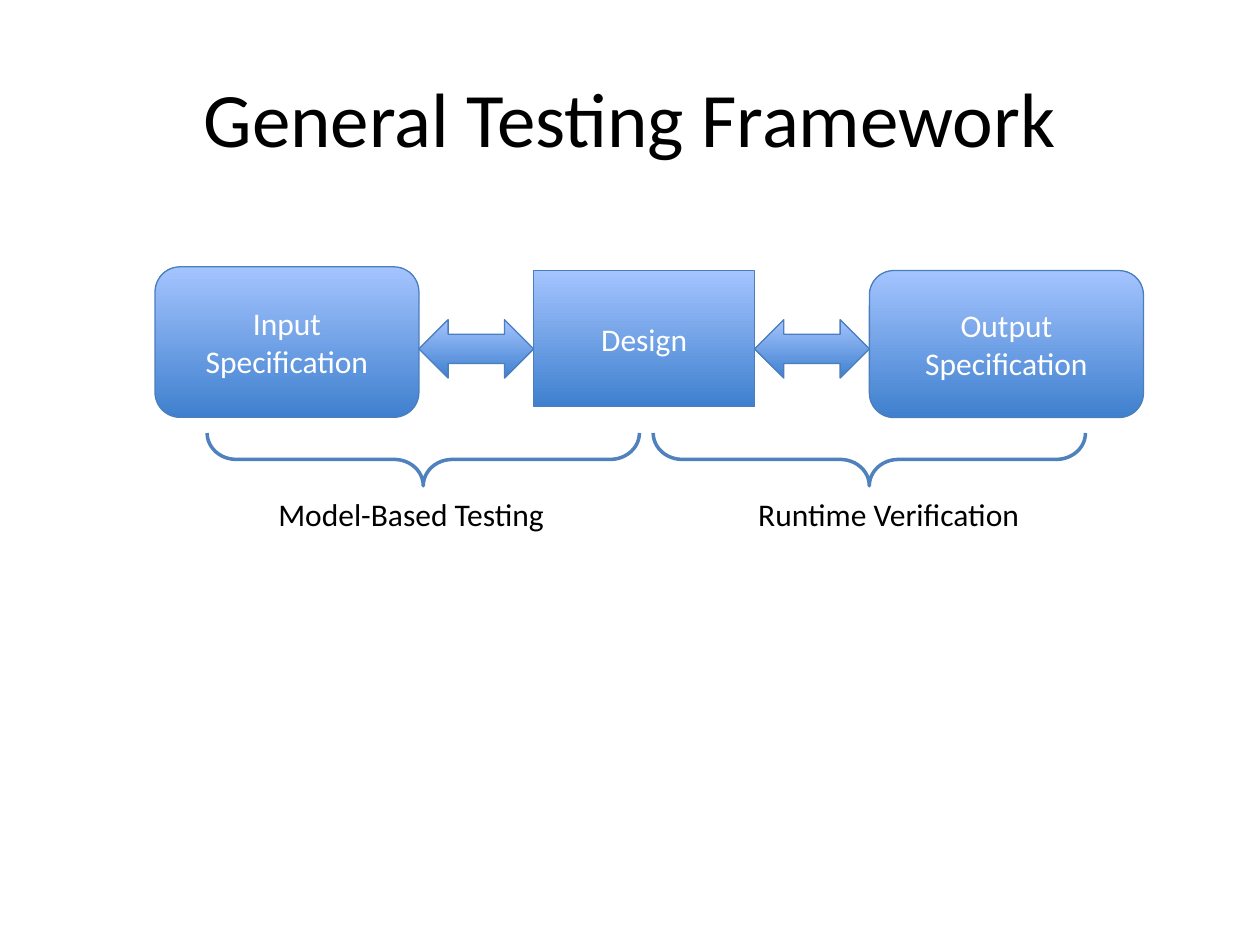
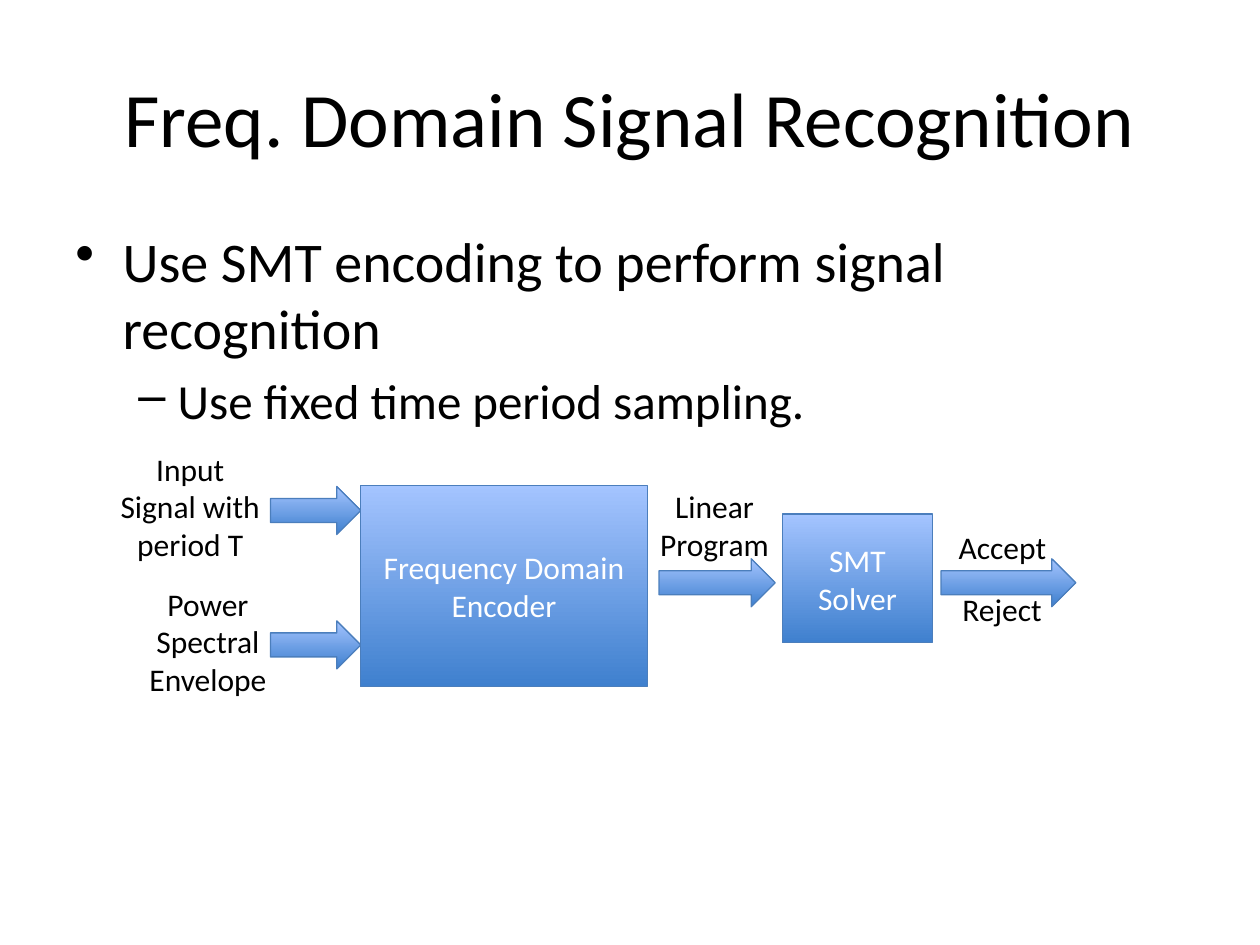
from dataclasses import dataclass

from lxml.etree import SubElement
from pptx import Presentation
from pptx.dml.color import RGBColor
from pptx.enum.shapes import MSO_SHAPE
from pptx.enum.text import MSO_ANCHOR, PP_ALIGN
from pptx.oxml.ns import qn
from pptx.util import Pt


@dataclass(frozen=True)
class Theme:
    """Colours and type sizes for the whole deck."""

    font: str = "Calibri"
    ink: str = "000000"
    light: str = "FFFFFF"
    deep: str = "3F80CE"
    pale: str = "A4C4FF"
    edge: str = "4B7EBC"
    brace: str = "4F81BD"
    title: int = 44
    label: int = 18
    levels: tuple = (32, 28)


THEME = Theme()
BULLETS = (("•", 27, 27), ("–", 58.5, 22.5))


def place(item, spot):
    """Move and size an item, in points."""
    item.left, item.top, item.width, item.height = map(Pt, spot)


def style(para, size, color, align):
    """Set the font and alignment of a paragraph."""
    para.font.name = THEME.font
    para.font.size = Pt(size)
    para.font.color.rgb = RGBColor.from_string(color)
    para.alignment = align


def write(frame, lines, size, color, align):
    """Write one paragraph per line in a common style."""
    frame.word_wrap = True
    frame.text = "\n".join(lines)
    for para in frame.paragraphs:
        style(para, size, color, align)


def add_page(deck, title):
    """Add a title-only slide with its title in place."""
    slide = deck.slides.add_slide(deck.slide_layouts[5])
    head = slide.shapes.title
    place(head, (36, 21.6, 648, 90))
    write(head.text_frame, [title], THEME.title, THEME.ink, PP_ALIGN.CENTER)
    head.text_frame.vertical_anchor = MSO_ANCHOR.MIDDLE
    return slide


def add_form(slide, kind, spot, *lines):
    """Add a shaded shape, with centred text if given."""
    form = slide.shapes.add_shape(kind, *map(Pt, spot))
    form.shadow.inherit = False
    form.fill.gradient()
    form.fill.gradient_angle = 90
    for stop, color in zip(form.fill.gradient_stops, (THEME.deep, THEME.pale)):
        stop.color.rgb = RGBColor.from_string(color)
    form.line.color.rgb = RGBColor.from_string(THEME.edge)
    form.line.width = Pt(0.75)
    if lines:
        write(form.text_frame, lines, THEME.label, THEME.light, PP_ALIGN.CENTER)
        form.text_frame.vertical_anchor = MSO_ANCHOR.MIDDLE


def add_brace(slide, spot):
    """Add a brace turned to open upward."""
    brace = slide.shapes.add_shape(MSO_SHAPE.LEFT_BRACE, *map(Pt, spot))
    brace.rotation = 270
    brace.adjustments[0] = 0.55
    brace.adjustments[1] = 0.5
    brace.shadow.inherit = False
    brace.fill.background()
    brace.line.color.rgb = RGBColor.from_string(THEME.brace)
    brace.line.width = Pt(2)


def add_label(slide, spot, *lines, align=PP_ALIGN.CENTER):
    """Add a plain text label."""
    box = slide.shapes.add_textbox(*map(Pt, spot))
    write(box.text_frame, lines, THEME.label, THEME.ink, align)
    box.text_frame.word_wrap = len(lines) == 1


def add_list(slide, spot, items):
    """Add a bullet list from pairs of level and text."""
    frame = slide.shapes.add_textbox(*map(Pt, spot)).text_frame
    frame.word_wrap = True
    frame.text = "\n".join(text for _, text in items)
    for para, (level, _) in zip(frame.paragraphs, items):
        size = THEME.levels[level]
        mark, left, hang = BULLETS[level]
        para.level = level
        para.space_before = Pt(size * 0.2)
        style(para, size, THEME.ink, PP_ALIGN.LEFT)
        props = para._p.get_or_add_pPr()
        props.set("marL", str(Pt(left)))
        props.set("indent", str(-Pt(hang)))
        bullet = SubElement(props, qn("a:buChar"))
        bullet.set("char", mark)
        props.find(qn("a:defRPr")).addprevious(bullet)


def add_frame(deck):
    """Build the testing framework slide."""
    slide = add_page(deck, "General Testing Framework")
    for left in (481.7, 226.8):
        add_brace(slide, (left, 139, 30.2, 247))
    for left, wide, text in (
        (152, 213, "Model-Based Testing"),
        (426.2, 223, "Runtime Verification"),
    ):
        add_label(slide, (left, 279.4, wide, 28.8), text, align=PP_ALIGN.LEFT)
    for kind, spot, text in (
        (MSO_SHAPE.ROUNDED_RECTANGLE, (88.6, 152.5, 150.8, 86), "Input Specification"),
        (MSO_SHAPE.RECTANGLE, (305, 154.6, 126.2, 77.8), "Design"),
        (MSO_SHAPE.ROUNDED_RECTANGLE, (496.8, 154.6, 156.6, 84), "Output Specification"),
    ):
        add_form(slide, kind, spot, text)
    for left in (239.4, 431.2):
        add_form(slide, MSO_SHAPE.LEFT_RIGHT_ARROW, (left, 182.7, 65.6, 33.4))


def add_signal(deck):
    """Build the signal recognition slide."""
    slide = add_page(deck, "Freq. Domain Signal Recognition")
    for left, top, wide in (
        (154.6, 278, 51.6),
        (154.6, 354.8, 51.6),
        (376.6, 319.3, 66.4),
        (537.8, 319.3, 77),
    ):
        add_form(slide, MSO_SHAPE.RIGHT_ARROW, (left, top, wide, 27.4))
    add_label(slide, (59, 253.4, 99.4, 72.7), "Input", "Signal with", "period T")
    add_label(slide, (69.1, 330.5, 99.4, 72.7), "Power Spectral Envelope")
    add_label(slide, (369.4, 275, 77.8, 51), "Linear", "Program")
    add_label(slide, (540.7, 298.1, 111.6, 28.8), "Accept", align=PP_ALIGN.LEFT)
    add_label(slide, (542.9, 333.4, 80.6, 28.8), "Reject", align=PP_ALIGN.LEFT)
    add_form(slide, MSO_SHAPE.RECTANGLE, (447.1, 293.8, 85.7, 73.6), "SMT", "Solver")
    add_form(slide, MSO_SHAPE.RECTANGLE, (206, 277.4, 164, 115), "Frequency Domain Encoder")
    add_list(slide, (36, 126, 648, 356.4), (
        (0, "Use SMT encoding to perform signal recognition"),
        (1, "Use fixed time period sampling."),
    ))


def main():
    """Build and save the deck."""
    deck = Presentation()
    deck.slide_width, deck.slide_height = Pt(720), Pt(540)
    add_frame(deck)
    add_signal(deck)
    deck.save("out.pptx")


if __name__ == "__main__":
    main()
